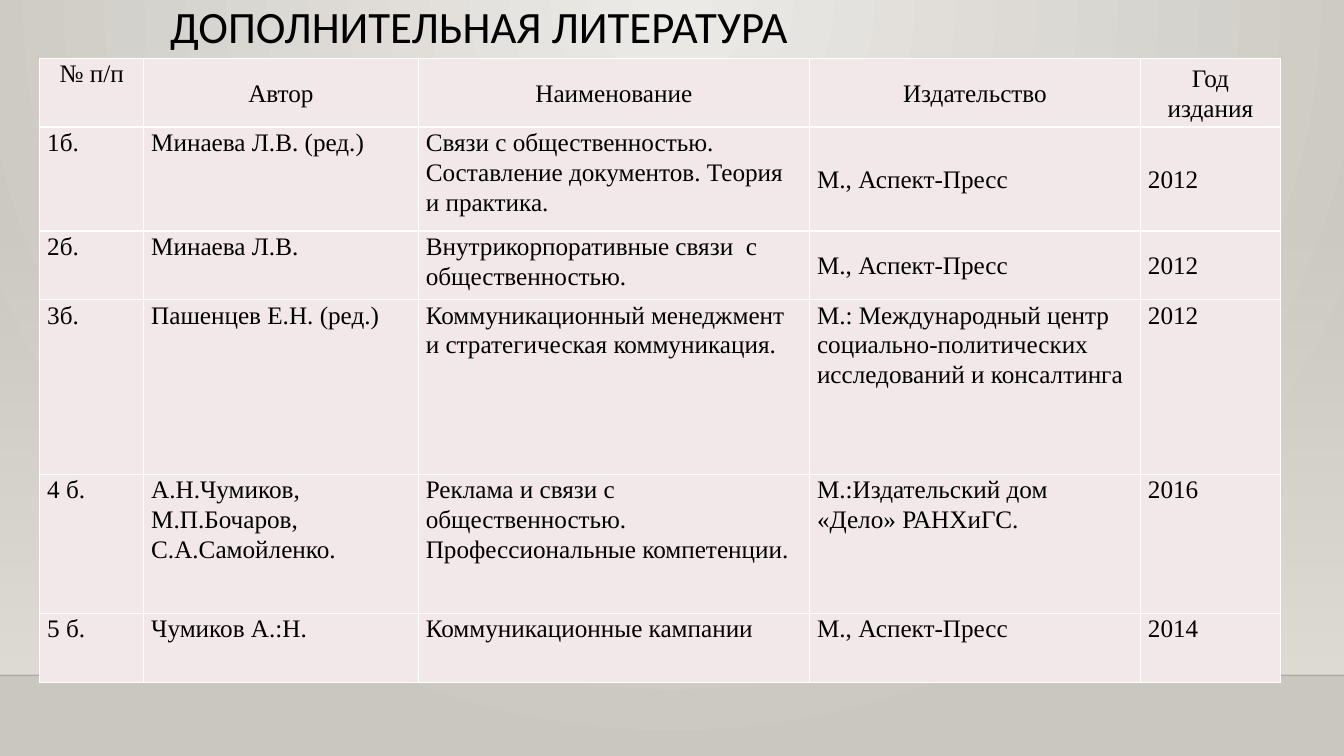
from lxml import etree
from pptx import Presentation
from pptx import util as u
from pptx.dml.color import RGBColor
from pptx.enum import shapes, text
from pptx.oxml.ns import qn

TITLE = "ДОПОЛНИТЕЛЬНАЯ ЛИТЕРАТУРА"
HEADER = ("№ п/п", "Автор", "Наименование", "Издательство", "Год издания")
BOOKS = [
    ("1б.", "Минаева Л.В. (ред.)",
     "Связи с общественностью. Составление документов. Теория и практика.",
     "М., Аспект-Пресс", "2012"),
    ("2б.", "Минаева Л.В.", "Внутрикорпоративные связи  с общественностью.",
     "М., Аспект-Пресс", "2012"),
    ("3б.", "Пашенцев Е.Н. (ред.)",
     "Коммуникационный менеджмент и стратегическая коммуникация.",
     "М.: Международный центр социально-политических исследований и консалтинга",
     "2012"),
    ("4 б.", "А.Н.Чумиков, М.П.Бочаров, С.А.Самойленко.",
     "Реклама и связи с общественностью. Профессиональные компетенции.",
     "М.:Издательский дом «Дело» РАНХиГС.", "2016"),
    ("5 б.", "Чумиков А.:Н.", "Коммуникационные кампании",
     "М., Аспект-Пресс", "2014"),
]
COLS = (2.62, 6.92, 9.86, 8.34, 3.53)
ROWS = (1.73, 2.62, 1.73, 4.4, 3.51, 1.73)
MIDDLE_CELLS = {(0, c) for c in range(1, 5)} | {(r, c) for r in (1, 2) for c in (3, 4)}
WIDTH, HEIGHT, FLOOR = 33.87, 19.05, 17.02
TITLE_FONT = {"name": "Calibri", "size": u.Pt(32), "bold": False}
CELL_FONT = {"name": "Times New Roman", "size": u.Pt(18), "bold": False}
CELL_MARGINS = {"margin_left": u.Cm(0.19), "margin_right": u.Cm(0.19),
                "margin_top": 0, "margin_bottom": 0}
TABLE_FLAGS = {"first_row": False, "horz_banding": False}


def rgb(value):
    return RGBColor.from_string(value)


def assign(obj, values):
    for name, value in values.items():
        setattr(obj, name, value)


def add(parent, tag, **attrs):
    return etree.SubElement(parent, qn(tag), {k: str(v) for k, v in attrs.items()})


def gradient(parent, stops):
    grad = add(parent, "a:gradFill", rotWithShape=1)
    gs_list = add(grad, "a:gsLst")
    for pos, color, alpha in stops:
        clr = add(add(gs_list, "a:gs", pos=pos * 1000), "a:srgbClr", val=color)
        if alpha < 100:
            add(clr, "a:alpha", val=alpha * 1000)
    return grad


def write(p, words, font, spacing, align):
    p.line_spacing = spacing
    p.alignment = align
    r = p.add_run()
    r.text = words
    assign(r.font, font)
    r.font.color.rgb = rgb("000000")


def add_background(s):
    s.background.fill.solid()
    bg_pr = s.background._cSld.find(qn("p:bg")).find(qn("p:bgPr"))
    old = bg_pr.find(qn("a:solidFill"))
    grad = gradient(bg_pr, [(0, "ECEAE7", 100), (100, "CAC7C1", 100)])
    add(add(grad, "a:path", path="circle"), "a:fillToRect",
        l=43000, t=0, r=43000, b=100000)
    bg_pr.replace(old, grad)


def add_wall(s):
    top = 5.61
    sp = s.shapes.add_shape(shapes.MSO_SHAPE.RECTANGLE, 0, u.Cm(top),
                            u.Cm(WIDTH), u.Cm(FLOOR - top))
    sp.shadow.inherit = False
    sp.line.fill.background()
    sp.fill.solid()
    sp_pr = sp._element.spPr
    grad = gradient(sp_pr, [(0, "DFDBD5", 0), (100, "DFDBD5", 100)])
    add(grad, "a:lin", ang=5400000, scaled=0)
    sp_pr.replace(sp_pr.find(qn("a:solidFill")), grad)

    edge = s.shapes.add_connector(shapes.MSO_CONNECTOR.STRAIGHT, 0, u.Cm(FLOOR),
                                  u.Cm(WIDTH), u.Cm(FLOOR))
    edge.line.width = u.Pt(1)
    edge.line.color.rgb = rgb("000001")
    add(next(edge._element.spPr.iter(qn("a:srgbClr"))), "a:alpha", val=20000)
    add(edge._element.spPr, "a:effectLst")


def add_title(s):
    tf = s.shapes.add_textbox(u.Cm(4.04), 0, u.Cm(26.67), u.Cm(1.47)).text_frame
    assign(tf, {"word_wrap": True, "vertical_anchor": text.MSO_ANCHOR.MIDDLE})
    write(tf.paragraphs[0], TITLE, TITLE_FONT, 0.9, text.PP_ALIGN.LEFT)


def add_borders(cell):
    tc_pr = cell._tc.get_or_add_tcPr()
    for i, side in enumerate(("a:lnL", "a:lnR", "a:lnT", "a:lnB")):
        ln = add(tc_pr, side, w=u.Pt(1))
        add(add(ln, "a:solidFill"), "a:srgbClr", val="FFFFFF")
        tc_pr.insert(i, ln)


def add_books(s):
    table = s.shapes.add_table(len(ROWS), len(COLS), u.Cm(1), u.Cm(1.47),
                               u.Cm(sum(COLS)), u.Cm(sum(ROWS))).table
    assign(table, TABLE_FLAGS)
    for col, width in zip(table.columns, COLS):
        col.width = u.Cm(width)
    for row, height in zip(table.rows, ROWS):
        row.height = u.Cm(height)
    for i, values in enumerate([HEADER] + BOOKS):
        align = text.PP_ALIGN.LEFT if i else text.PP_ALIGN.CENTER
        for j, words in enumerate(values):
            cell = table.cell(i, j)
            assign(cell, CELL_MARGINS)
            middle = (i, j) in MIDDLE_CELLS
            cell.vertical_anchor = text.MSO_ANCHOR.MIDDLE if middle else text.MSO_ANCHOR.TOP
            cell.fill.solid()
            cell.fill.fore_color.rgb = rgb("F3E8E9")
            add_borders(cell)
            write(cell.text_frame.paragraphs[0], words, CELL_FONT, 1.07, align)


def main():
    prs = Presentation()
    assign(prs, {"slide_width": u.Cm(WIDTH), "slide_height": u.Cm(HEIGHT)})
    s = prs.slides.add_slide(prs.slide_layouts[6])
    for step in (add_background, add_wall, add_title, add_books):
        step(s)
    prs.save("out.pptx")


if __name__ == "__main__":
    main()
